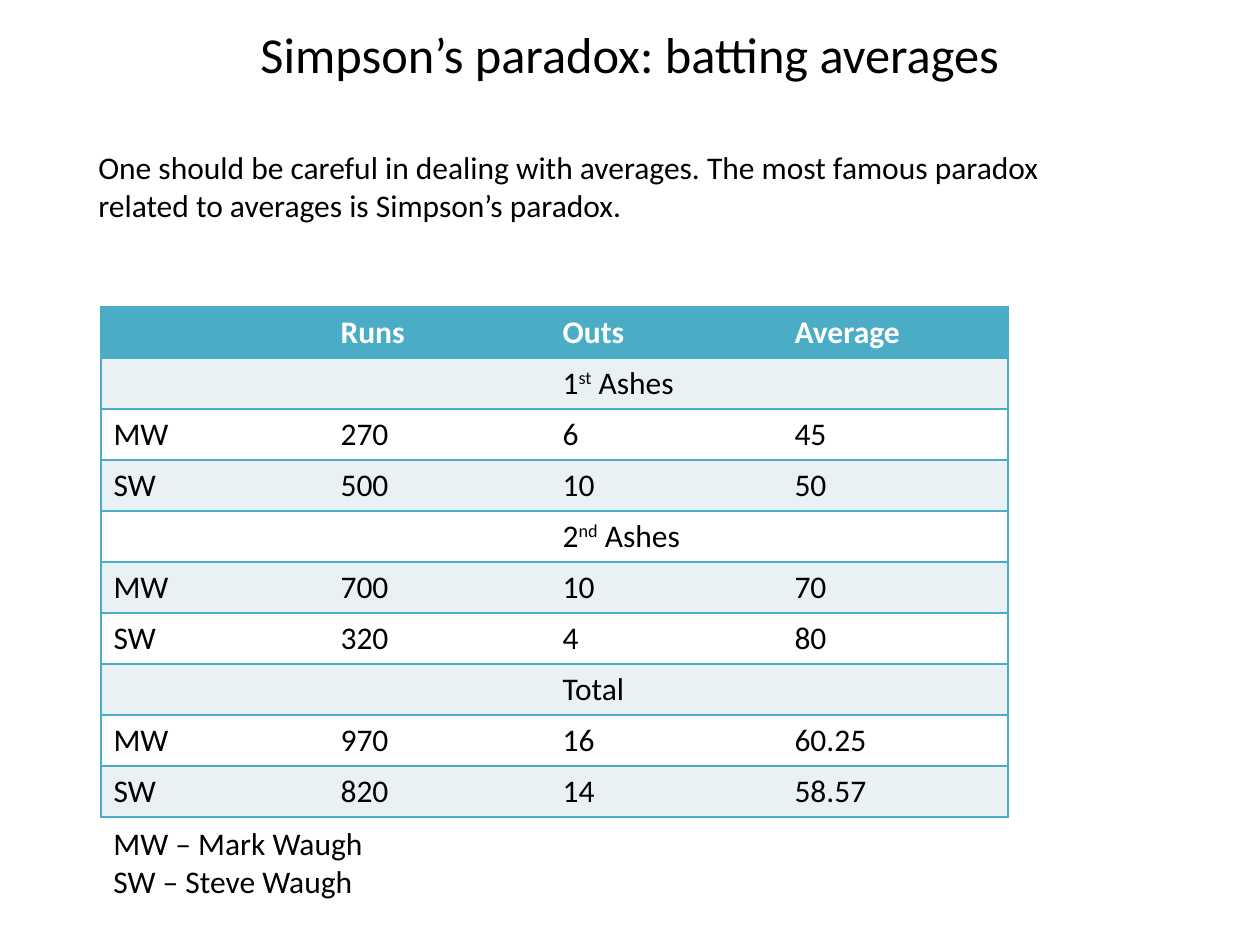
from lxml import etree
from pptx import Presentation, util as u
from pptx.dml import color
from pptx.enum import text
from pptx.oxml import ns

COLORS = {"ink": "000000", "white": "FFFFFF", "teal": "4BACC6", "band": "E9F1F5"}
COLUMN_WIDTHS = [227, 222, 232, 226]
ROW_HEIGHT = 51
SCORES = [
    ["", "Runs", "Outs", "Average"],
    ["", "", ("1", "st", " Ashes"), ""],
    ["MW", "270", "6", "45"],
    ["SW", "500", "10", "50"],
    ["", "", ("2", "nd", " Ashes"), ""],
    ["MW", "700", "10", "70"],
    ["SW", "320", "4", "80"],
    ["", "", "Total", ""],
    ["MW", "970", "16", "60.25"],
    ["SW", "820", "14", "58.57"],
]


def px(length):
    return u.Emu(round(length * 914400 / 126))


def rgb(name):
    return color.RGBColor.from_string(COLORS[name])


class SlideWriter:
    """Draws text and tables in one style on the current slide."""

    font = "Calibri"
    size = 18

    def __init__(self, slide):
        self.slide = slide

    def style(self, frame, size=None, ink="ink", bold=False):
        for paragraph in frame.paragraphs:
            for run in paragraph.runs:
                run.font.name = self.font
                run.font.size = u.Pt(size or self.size)
                run.font.bold = bold
                run.font.color.rgb = rgb(ink)

    def text(self, box, lines, size=None, align=text.PP_ALIGN.LEFT,
             anchor=text.MSO_ANCHOR.TOP):
        frame = self.slide.shapes.add_textbox(*map(px, box)).text_frame
        frame.word_wrap = True
        frame.vertical_anchor = anchor
        frame.text = "\n".join(lines)
        for paragraph in frame.paragraphs:
            paragraph.alignment = align
        self.style(frame, size)

    def borders(self, cell, sides):
        properties = cell._tc.get_or_add_tcPr()
        for side in "LRTB":
            line = etree.SubElement(properties, ns.qn(f"a:ln{side}"), w=str(u.Pt(1)))
            if side in sides:
                fill = etree.SubElement(line, ns.qn("a:solidFill"))
                etree.SubElement(fill, ns.qn("a:srgbClr"), val=COLORS["teal"])
            else:
                etree.SubElement(line, ns.qn("a:noFill"))

    def cell(self, cell, content, fill, sides, ink, bold):
        self.borders(cell, sides)
        cell.fill.solid()
        cell.fill.fore_color.rgb = rgb(fill)
        if isinstance(content, tuple):
            paragraph = cell.text_frame.paragraphs[0]
            number, ordinal, rest = [paragraph.add_run() for part in content]
            number.text, ordinal.text, rest.text = content
            ordinal._r.get_or_add_rPr().set("baseline", "30000")
        else:
            cell.text_frame.text = content
        self.style(cell.text_frame, ink=ink, bold=bold)

    def table(self, left, top, widths, row_height, rows):
        table = self.slide.shapes.add_table(
            len(rows), len(widths), px(left), px(top),
            px(sum(widths)), px(row_height * len(rows))).table
        for column, width in zip(table.columns, widths):
            column.width = px(width)
        for r, row in enumerate(rows):
            table.rows[r].height = px(row_height)
            header = r == 0
            fill = "teal" if header else "band" if r % 2 else "white"
            for c, content in enumerate(row):
                sides = "TB" + "L" * (c == 0) + "R" * (c == len(widths) - 1)
                self.cell(table.cell(r, c), content, fill, sides,
                          "white" if header else "ink", header)


def main():
    deck = Presentation()
    deck.slide_width, deck.slide_height = px(1260), px(945)
    writer = SlideWriter(deck.slides.add_slide(deck.slide_layouts[6]))
    writer.text((63, 15, 1134, 77), ["Simpson’s paradox: batting averages"], 28.8,
                text.PP_ALIGN.CENTER, text.MSO_ANCHOR.MIDDLE)
    writer.table(101, 307, COLUMN_WIDTHS, ROW_HEIGHT, SCORES)
    writer.text((101, 818, 847, 89), ["MW – Mark Waugh", "SW – Steve Waugh"])
    writer.text((86, 142, 1045, 89), [
        "One should be careful in dealing with averages. The most famous paradox "
        "related to averages is Simpson’s paradox."])
    deck.save("out.pptx")


if __name__ == "__main__":
    main()
